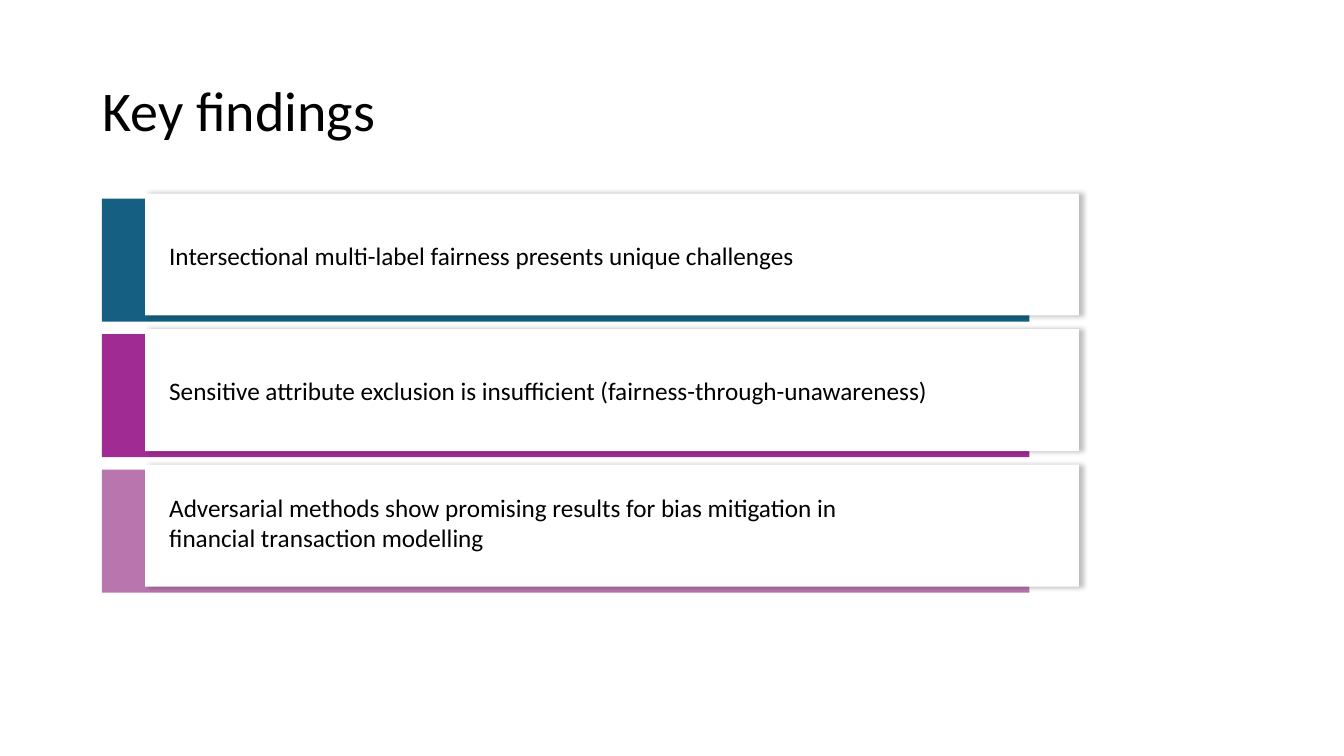
from dataclasses import dataclass

from lxml.etree import SubElement as Sub
from pptx import Presentation
from pptx.dml.color import RGBColor as Rgb
from pptx.enum.shapes import MSO_SHAPE as Shape
from pptx.enum.text import MSO_ANCHOR as Anchor
from pptx.oxml.ns import qn
from pptx.util import Inches, Pt


@dataclass(frozen=True)
class Theme:
    font: str = "Calibri"
    ink: str = "000000"
    paper: str = "FFFFFF"
    title: int = 40
    body: int = 18


THEME = Theme()
TOP, STEP = 1.97, 1.345  # first bar and distance between rows

# Bar colour, text, and the top, width and height of the text box
ROWS = [
    ("156082", "Intersectional multi-label fairness presents unique challenges",
     2.33, 8.54, 0.71),
    ("A02B93", "Sensitive attribute exclusion is insufficient (fairness-through-unawareness)",
     3.67, 8.1, 0.4),
    ("B975AE", "Adversarial methods show promising results for bias mitigation "
     "in financial transaction modelling", 4.83, 7.64, 0.71),
]


def add_rect(slide, box, fill):
    rect = slide.shapes.add_shape(Shape.RECTANGLE, *map(Inches, box))
    rect.shadow.inherit = False
    rect.fill.solid()
    rect.fill.fore_color.rgb = Rgb.from_string(fill)
    rect.line.fill.background()
    return rect


def add_shadow(shape):
    """Cast a soft shadow to the right."""
    effects = shape._element.spPr.find(qn("a:effectLst"))
    outer = Sub(effects, qn("a:outerShdw"), blurRad=str(Pt(4)), dist=str(Pt(3)),
                dir="0", algn="ctr", rotWithShape="0")
    color = Sub(outer, qn("a:srgbClr"), val=THEME.ink)
    Sub(color, qn("a:alpha"), val="25000")


def add_text(slide, box, text, size, anchor=Anchor.TOP, spacing=1.0):
    frame = slide.shapes.add_textbox(*map(Inches, box)).text_frame
    frame.word_wrap = True
    frame.vertical_anchor = anchor
    para = frame.paragraphs[0]
    para.line_spacing = spacing
    run = para.add_run()
    run.text = text
    for name, value in {"name": THEME.font, "size": Pt(size)}.items():
        setattr(run.font, name, value)
    run.font.color.rgb = Rgb.from_string(THEME.ink)


def add_row(slide, top, color, text, box):
    """Coloured bar, white card above it, then the finding."""
    add_rect(slide, (1.01, top, 9.2, 1.22), color)
    add_shadow(add_rect(slide, (1.44, top - 0.05, 9.26, 1.21), THEME.paper))
    add_text(slide, box, text, THEME.body)


def main():
    deck = Presentation()
    deck.slide_width, deck.slide_height = Inches(13.33), Inches(7.5)
    slide = deck.slides.add_slide(deck.slide_layouts[6])

    # Title
    add_text(slide, (0.92, 0.4, 11.5, 1.45), "Key findings", THEME.title,
             Anchor.MIDDLE, 0.9)

    # Findings
    for i, (color, text, top, width, height) in enumerate(ROWS):
        add_row(slide, TOP + i * STEP, color, text, (1.58, top, width, height))

    deck.save("out.pptx")


if __name__ == "__main__":
    main()
